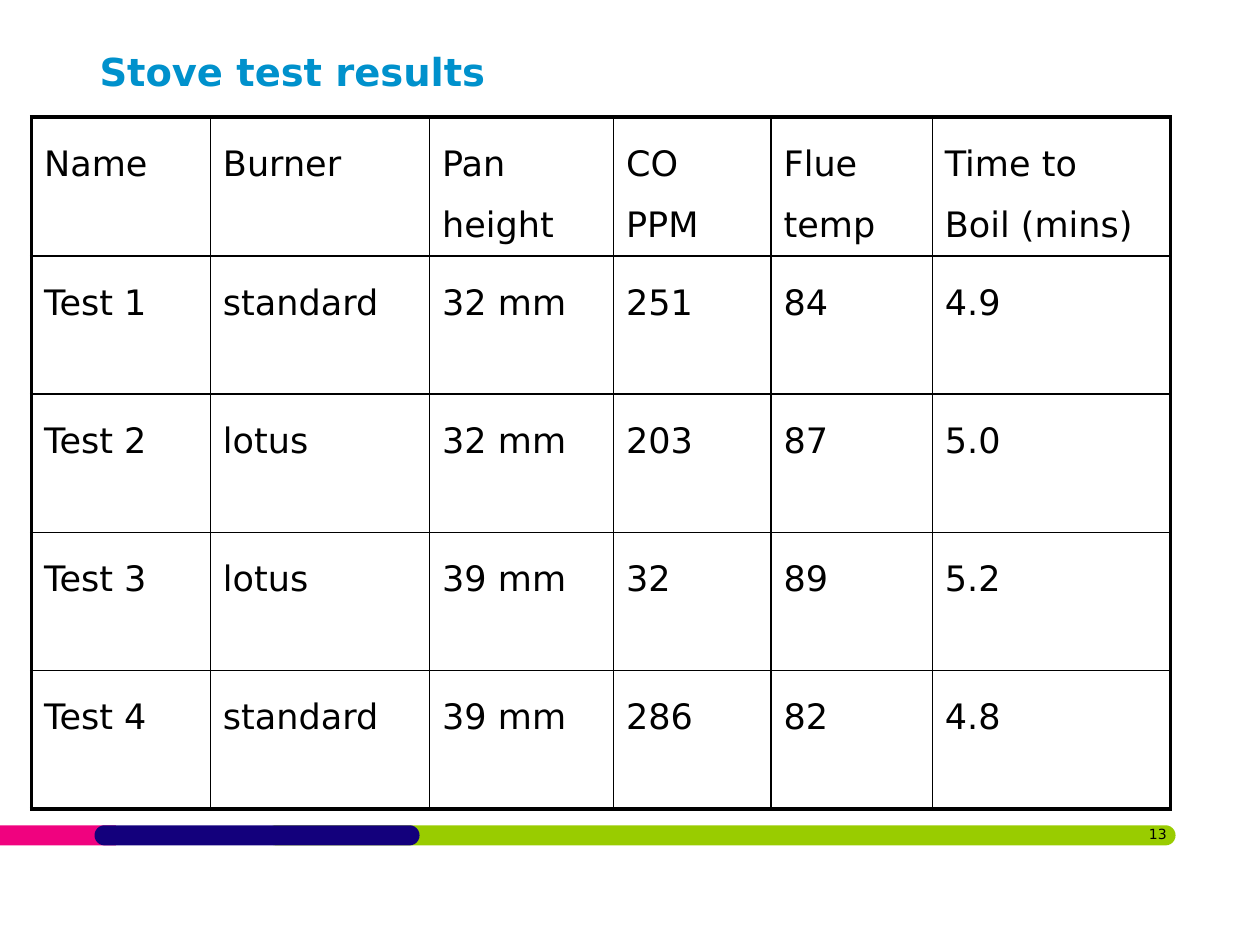
from dataclasses import dataclass

from lxml import etree
from pptx import Presentation
from pptx import util as u
from pptx.dml.color import RGBColor
from pptx.enum import shapes, text
from pptx.oxml import ns


@dataclass(frozen=True)
class Theme:
    font: str = "DejaVu Sans"
    ink: str = "000000"
    heading: str = "0091CC"
    green: str = "99CC00"
    pink: str = "F0027F"
    navy: str = "13007C"
    title_size: float = 22
    table_size: float = 20
    number_size: float = 8
    outer_line: float = 2.25
    inner_line: float = 1


THEME = Theme()

RESULTS = [
    ["Name", "Burner", "Pan\nheight", "CO\nPPM", "Flue\ntemp", "Time to\nBoil (mins)"],
    ["Test 1", "standard", "32 mm", "251", "84", "4.9"],
    ["Test 2", "lotus", "32 mm", "203", "87", "5.0"],
    ["Test 3", "lotus", "39 mm", "32", "89", "5.2"],
    ["Test 4", "standard", "39 mm", "286", "82", "4.8"],
]
COLUMN_WIDTHS = [1.42, 1.74, 1.46, 1.25, 1.28, 1.89]


def add_run(paragraph, words, size, color=THEME.ink, bold=False):
    run = paragraph.add_run()
    run.text = words
    run.font.name = THEME.font
    run.font.size = u.Pt(size)
    run.font.bold = bold
    run.font.color.rgb = RGBColor.from_string(color)


def add_text_frame(slide, left, top, width, height, wrap=True):
    frame = slide.shapes.add_textbox(
        u.Inches(left), u.Inches(top), u.Inches(width), u.Inches(height)).text_frame
    frame.margin_left = frame.margin_right = frame.margin_top = frame.margin_bottom = 0
    frame.word_wrap = wrap
    frame.vertical_anchor = text.MSO_ANCHOR.TOP
    return frame


def add_footer(slide, left, top, width, height):
    # Coloured bars, back to front: offset, width, corner rounding, colour
    bars = [
        (2.11, width - 2.11, 0.5, THEME.green),
        (0, 0.92, 0, THEME.pink),
        (0.75, 2.58, 0.5, THEME.navy),
    ]
    for offset, bar_width, rounding, color in bars:
        bar = slide.shapes.add_shape(
            shapes.MSO_SHAPE.ROUNDED_RECTANGLE, u.Inches(left + offset),
            u.Inches(top), u.Inches(bar_width), u.Inches(height))
        bar.adjustments[0] = rounding
        bar.shadow.inherit = False
        bar.fill.solid()
        bar.fill.fore_color.rgb = RGBColor.from_string(color)
        bar.line.fill.background()

    # Slide number at the right end of the green bar
    number_width = 1.67
    number = add_text_frame(
        slide, left + width - 0.07 - number_width, top, number_width, 0.21).paragraphs[0]
    number.alignment = text.PP_ALIGN.RIGHT
    add_run(number, "13", THEME.number_size)


def add_title(slide, left, top, width, height):
    title = add_text_frame(slide, left, top, width, height, wrap=False).paragraphs[0]
    title.alignment = text.PP_ALIGN.LEFT
    title.line_spacing = u.Pt(36)
    add_run(title, "Stove test results", THEME.title_size, THEME.heading, bold=True)


def set_borders(cell, outer_sides):
    properties = cell._tc.get_or_add_tcPr()
    for index, (side, is_outer) in enumerate(outer_sides.items()):
        points = THEME.outer_line if is_outer else THEME.inner_line
        line = etree.Element(ns.qn(f"a:ln{side}"), w=str(u.Pt(points)))
        fill = etree.SubElement(line, ns.qn("a:solidFill"))
        etree.SubElement(fill, ns.qn("a:srgbClr"), val=THEME.ink)
        properties.insert(index, line)


def add_results_table(slide, left, top, width, height):
    row_count, column_count = len(RESULTS), len(COLUMN_WIDTHS)
    table = slide.shapes.add_table(
        row_count, column_count, u.Inches(left), u.Inches(top),
        u.Inches(width), u.Inches(height)).table
    table.first_row = table.horz_banding = False
    for column, column_width in zip(table.columns, COLUMN_WIDTHS):
        column.width = u.Inches(column_width)

    for r, row in enumerate(RESULTS):
        table.rows[r].height = u.Inches(height / row_count)
        for c, words in enumerate(row):
            cell = table.cell(r, c)
            cell.fill.background()
            set_borders(cell, {"L": c == 0, "R": c == column_count - 1,
                               "T": r == 0, "B": r == row_count - 1})
            frame = cell.text_frame
            for i, line in enumerate(words.split("\n")):
                paragraph = frame.add_paragraph() if i else frame.paragraphs[0]
                paragraph.line_spacing = 1.5
                add_run(paragraph, line, THEME.table_size)


def main():
    deck = Presentation()
    deck.slide_width, deck.slide_height = u.Inches(10), u.Inches(7.5)
    slide = deck.slides.add_slide(deck.slide_layouts[6])
    add_footer(slide, 0, 6.55, 9.33, 0.16)
    add_title(slide, 0.79, 0.25, 8.46, 0.6)
    add_results_table(slide, 0.25, 0.93, sum(COLUMN_WIDTHS), 5.49)
    deck.save("out.pptx")


if __name__ == "__main__":
    main()
